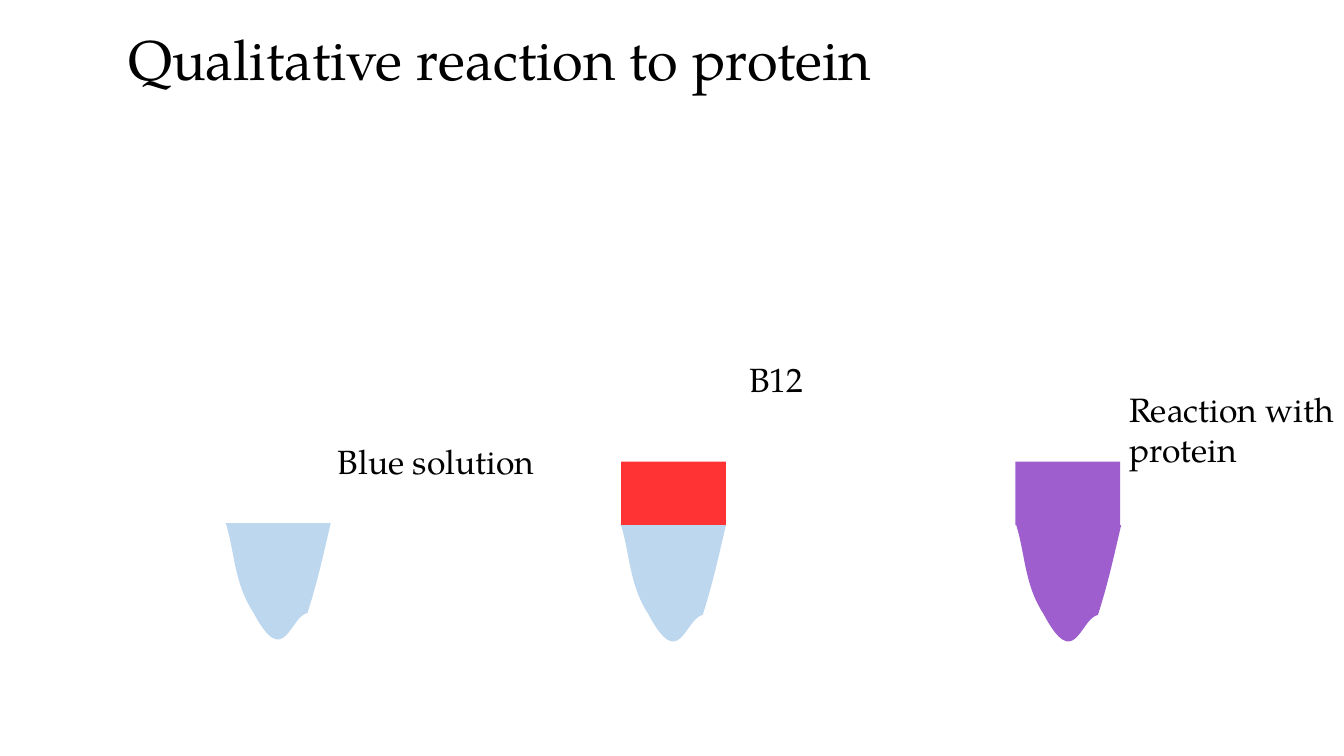
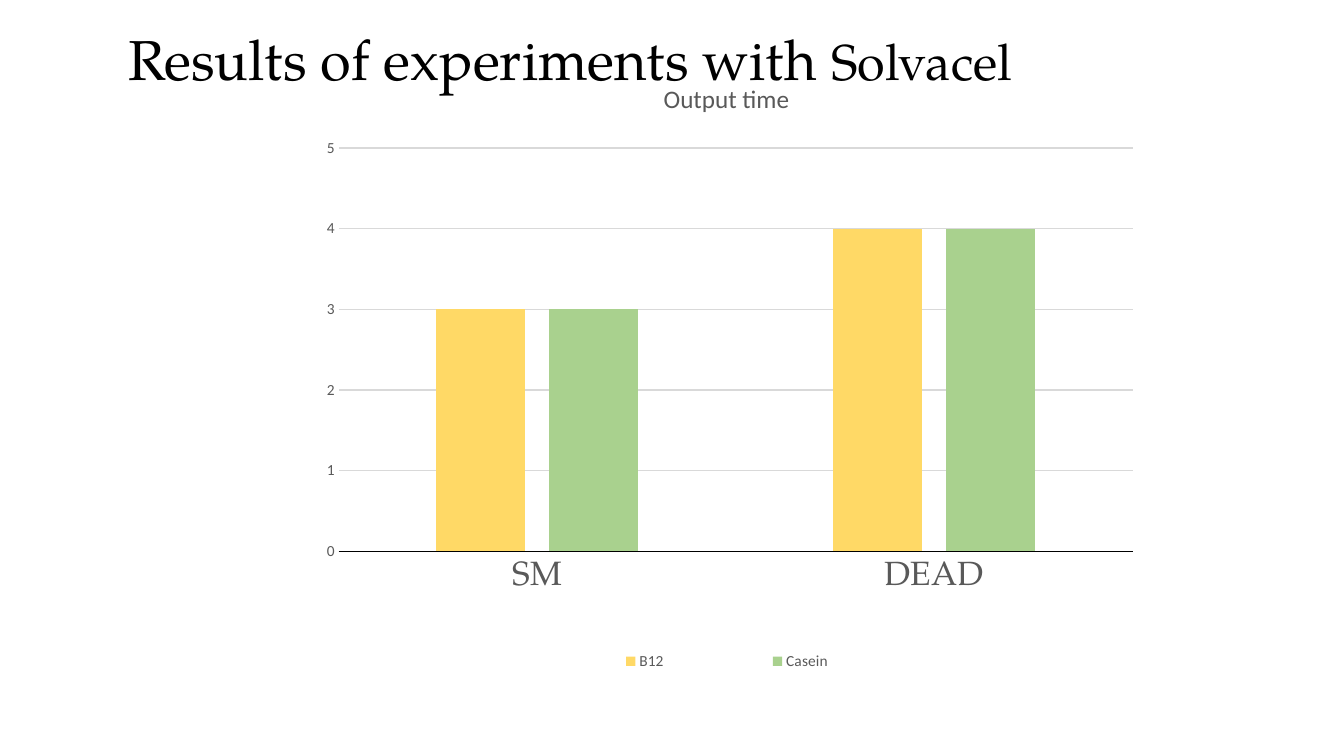
from dataclasses import dataclass

from lxml.etree import SubElement
from pptx import Presentation
from pptx.chart.data import CategoryChartData
from pptx.dml.color import RGBColor
from pptx.enum.chart import XL_CHART_TYPE, XL_LEGEND_POSITION, XL_TICK_LABEL_POSITION, XL_TICK_MARK
from pptx.enum.shapes import MSO_SHAPE
from pptx.enum.text import MSO_AUTO_SIZE
from pptx.oxml.ns import qn
from pptx.util import Inches, Pt


@dataclass(frozen=True)
class Theme:
    text_font: str = "TeX Gyre Pagella"
    chart_font: str = "Calibri"
    title_size: int = 40
    product_size: int = 36
    label_size: int = 24
    chart_title_size: int = 18
    chart_text_size: int = 11
    black: str = "000000"
    gray: str = "595959"
    grid: str = "D9D9D9"
    blue: str = "BDD7EE"
    red: str = "FF3333"
    purple: str = "9E5ECE"
    yellow: str = "FFD966"
    green: str = "A9D18E"


TUBE_WIDTH, TUBE_HEIGHT = 1.04, 1.15
TUBE_CURVES = (
    ((0.97, 0.3), (0.91, 0.58), (0.81, 0.89)),
    ((0.63, 0.93), (0.58, 1.47), (0.27, 0.88)),
    ((0.08, 0.59), (0.09, 0.29), (0, 0)),
)
CHART_WIDTH, CHART_HEIGHT = 8.13, 5.98


def manual_layout(parent, left, top, width=None, height=None, target=None):
    for old in parent.findall(qn("c:layout")):
        parent.remove(old)
    layout = SubElement(parent, qn("c:layout"))
    manual = SubElement(layout, qn("c:manualLayout"))
    settings = [("layoutTarget", target)] if target else []
    settings += [("xMode", "edge"), ("yMode", "edge"),
                 ("x", left / CHART_WIDTH), ("y", top / CHART_HEIGHT)]
    if width:
        settings += [("w", width / CHART_WIDTH), ("h", height / CHART_HEIGHT)]
    for name, value in settings:
        SubElement(manual, qn(f"c:{name}")).set("val", str(value))
    return layout


class Deck:
    """Builds slides in one shared style."""

    def __init__(self, theme):
        self.theme = theme
        self.presentation = Presentation()
        self.presentation.slide_width = Inches(13.33)
        self.presentation.slide_height = Inches(7.5)
        self.slide = None

    def add_slide(self):
        self.slide = self.presentation.slides.add_slide(self.presentation.slide_layouts[6])

    def style_font(self, font, size, color, name):
        font.size = Pt(size)
        font.bold = False
        font.name = name
        font.color.rgb = RGBColor.from_string(color)

    def text(self, left, top, width, height, content, size):
        box = self.slide.shapes.add_textbox(Inches(left), Inches(top), Inches(width), Inches(height))
        frame = box.text_frame
        frame.word_wrap = True
        frame.auto_size = MSO_AUTO_SIZE.SHAPE_TO_FIT_TEXT
        frame.margin_left = frame.margin_right = Inches(0.05)
        frame.margin_top = frame.margin_bottom = Inches(0.05)
        paragraph = frame.paragraphs[0]
        paragraph.add_run().text = content
        self.style_font(paragraph.font, size, self.theme.black, self.theme.text_font)
        return paragraph

    def title(self, width, content, product=None):
        paragraph = self.text(1.22, 0.19, width, 0.77, content, self.theme.title_size)
        if product:
            run = paragraph.add_run()
            run.text = product
            run.font.size = Pt(self.theme.product_size)

    def label(self, left, top, height, content):
        self.text(left, top, 2.33, height, content, self.theme.label_size)

    def paint(self, shape, color):
        shape.shadow.inherit = False
        shape.fill.solid()
        shape.fill.fore_color.rgb = RGBColor.from_string(color)
        shape.line.fill.background()

    def layer(self, left, color):
        shape = self.slide.shapes.add_shape(
            MSO_SHAPE.RECTANGLE, Inches(left), Inches(4.58), Inches(TUBE_WIDTH), Inches(0.63))
        self.paint(shape, color)

    def tube(self, left, top, color):
        corners = [(TUBE_WIDTH, 0)] + [curve[-1] for curve in TUBE_CURVES]
        builder = self.slide.shapes.build_freeform(Inches(left), Inches(top))
        builder.add_line_segments([(Inches(left + x), Inches(top + y)) for x, y in corners])
        shape = builder.convert_to_shape()
        shape.height = Inches(TUBE_HEIGHT)
        outline = next(shape._element.iter(qn("a:path")))
        outline.set("h", str(Inches(TUBE_HEIGHT)))
        for line, curve in zip(outline.findall(qn("a:lnTo"))[1:], TUBE_CURVES):
            bend = SubElement(outline, qn("a:cubicBezTo"))
            for x, y in curve:
                point = SubElement(bend, qn("a:pt"))
                point.set("x", str(Inches(x)))
                point.set("y", str(Inches(y)))
            outline.replace(line, bend)
        self.paint(shape, color)

    def column_chart(self, title, categories, series):
        data = CategoryChartData(number_format="0")
        data.categories = categories
        for name, values, _ in series:
            data.add_series(name, values)
        chart = self.slide.shapes.add_chart(
            XL_CHART_TYPE.COLUMN_CLUSTERED, Inches(3.11), Inches(0.76),
            Inches(CHART_WIDTH), Inches(CHART_HEIGHT), data).chart
        theme = self.theme
        self.style_font(chart.font, theme.chart_text_size, theme.gray, theme.chart_font)
        plot = chart.plots[0]
        plot.vary_by_categories = False
        plot.gap_width = 219
        plot.overlap = -27
        for item, (_, _, color) in zip(plot.series, series):
            item.format.fill.solid()
            item.format.fill.fore_color.rgb = RGBColor.from_string(color)
        self.chart_title(chart, title)
        self.chart_axes(chart)
        self.chart_legend(chart)
        area = chart._chartSpace.chart.plotArea
        area.insert(0, manual_layout(area, 0.25, 0.71, 7.88, 4, "inner"))

    def chart_title(self, chart, title):
        theme = self.theme
        chart.has_title = True
        paragraph = chart.chart_title.text_frame.paragraphs[0]
        paragraph.add_run().text = title
        self.style_font(paragraph.font, theme.chart_title_size, theme.gray, theme.chart_font)
        element = chart.chart_title._element
        element.find(qn("c:tx")).addnext(manual_layout(element, 3.43, 0))

    def chart_axes(self, chart):
        theme = self.theme
        category, value = chart.category_axis, chart.value_axis
        for axis in (category, value):
            axis.major_tick_mark = axis.minor_tick_mark = XL_TICK_MARK.NONE
        category.tick_label_position = XL_TICK_LABEL_POSITION.LOW
        self.style_font(category.tick_labels.font, theme.label_size, theme.gray, theme.text_font)
        value.minimum_scale, value.maximum_scale, value.major_unit = 0, 5, 1
        value.format.line.fill.background()
        value.has_major_gridlines = True
        for line, color in ((category.format.line, theme.black),
                            (value.major_gridlines.format.line, theme.grid)):
            line.width = Pt(1)
            line.color.rgb = RGBColor.from_string(color)

    def chart_legend(self, chart):
        theme = self.theme
        chart.has_legend = True
        legend = chart.legend
        legend.position = XL_LEGEND_POSITION.BOTTOM
        legend.include_in_layout = True
        self.style_font(legend.font, theme.chart_text_size, theme.gray, theme.chart_font)
        element = legend._element
        element.find(qn("c:legendPos")).addnext(manual_layout(element, 2.07, 5.62, 4.07, 0.36))


def build_reaction(deck):
    theme = deck.theme
    deck.add_slide()
    deck.layer(10.07, theme.purple)
    deck.layer(6.16, theme.red)
    for left, top, color in ((2.24, 5.19, theme.blue), (6.16, 5.21, theme.blue),
                             (10.08, 5.21, theme.purple)):
        deck.tube(left, top, color)
    deck.title(10.89, "Qualitative reaction to protein")
    deck.label(3.3, 4.33, 0.5, "Blue solution")
    deck.label(7.38, 3.51, 0.5, "B12")
    deck.label(11.15, 3.81, 0.91, "Reaction with protein")


def build_results(deck):
    theme = deck.theme
    deck.add_slide()
    deck.title(10.57, "Results of experiments with ", "Solvacel")
    deck.column_chart("Output time", ("SM", "DEAD"), (
        ("B12", (3, 4), theme.yellow),
        ("Casein", (3, 4), theme.green),
    ))


def main():
    deck = Deck(Theme())
    build_reaction(deck)
    build_results(deck)
    deck.presentation.save("out.pptx")


if __name__ == "__main__":
    main()
